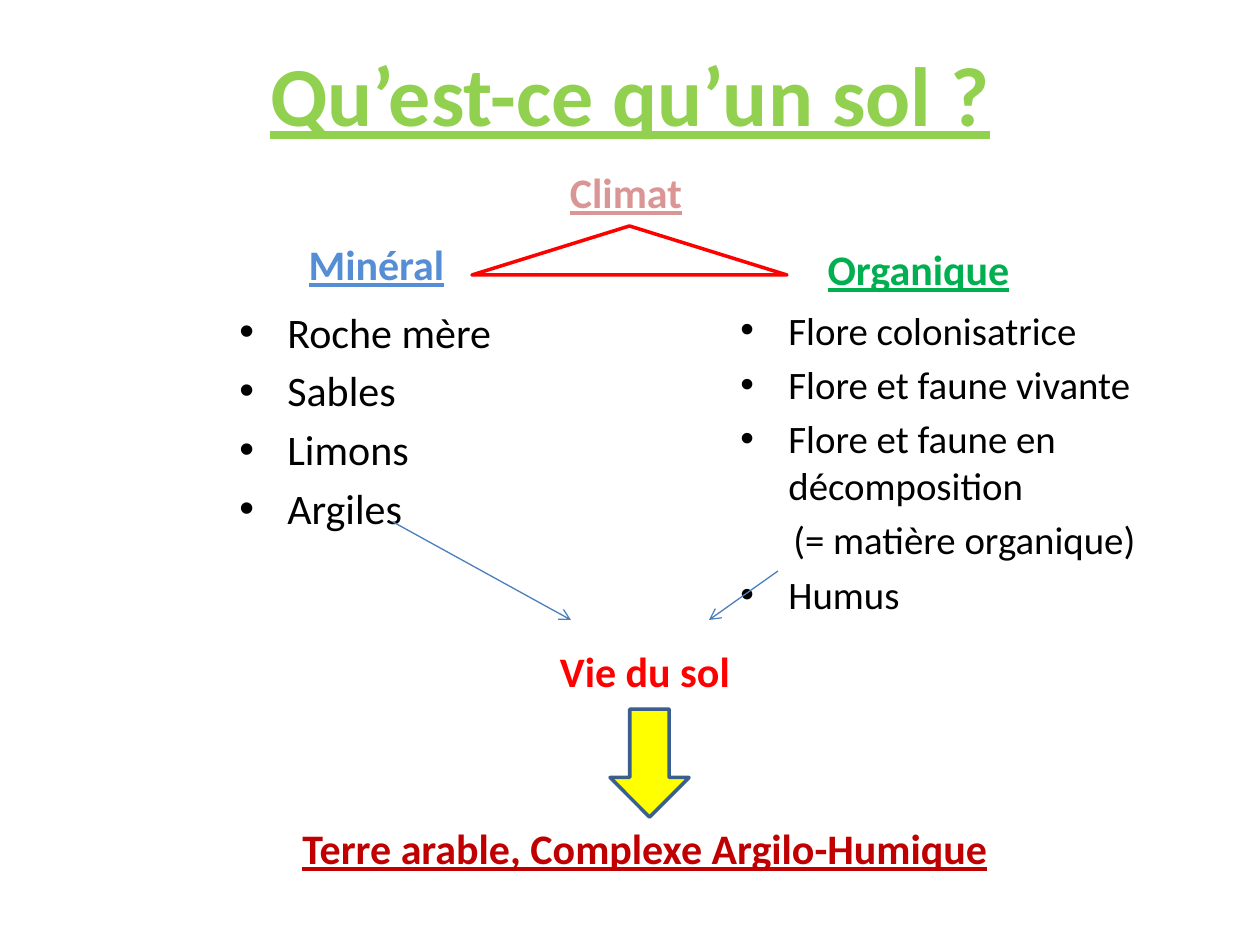
from lxml.etree import SubElement
from pptx import Presentation
from pptx.dml.color import RGBColor
from pptx.enum.shapes import MSO_CONNECTOR, MSO_SHAPE
from pptx.enum.text import MSO_ANCHOR, PP_ALIGN
from pptx.oxml.ns import qn
from pptx.util import Pt

PX = 914400 / 126


def px(n):
    return round(n * PX)


def rgb(value):
    return RGBColor.from_string(value)


class Deck:
    font = "Calibri"
    indent = 48

    def __init__(self, prs):
        self.s = prs.slides.add_slide(prs.slide_layouts[6])

    def box(self, x, y, w, h, anchor):
        tf = self.s.shapes.add_textbox(*map(px, (x, y, w, h))).text_frame
        tf.word_wrap = True
        tf.vertical_anchor = anchor
        return tf

    def run(self, p, text, color, **fmt):
        r = p.add_run()
        r.text = text
        r.font.color.rgb = rgb(color)
        for name, value in {"name": self.font, **fmt}.items():
            setattr(r.font, name, value)

    def heading(self, text, x, y, w, h, color, size=24, underline=True,
                anchor=MSO_ANCHOR.MIDDLE):
        p = self.box(x, y, w, h, anchor).paragraphs[0]
        p.alignment = PP_ALIGN.CENTER
        self.run(p, text, color, size=Pt(size), bold=True, underline=underline)

    def bullets(self, items, x, y, w, h, size):
        """Each item is (text, left margin); the plain indent gets a bullet."""
        tf = self.box(x, y, w, h, MSO_ANCHOR.TOP)
        for i, (text, margin) in enumerate(items):
            p = tf.paragraphs[0] if i == 0 else tf.add_paragraph()
            p.space_before = Pt(size * 0.2)
            pPr = p._p.get_or_add_pPr()
            pPr.set("marL", str(px(margin)))
            if margin == self.indent:
                pPr.set("indent", str(-px(margin)))
                SubElement(pPr, qn("a:buFont"), typeface="Arial")
                SubElement(pPr, qn("a:buChar"), char="•")
            self.run(p, text, "000000", size=Pt(size))

    def shape(self, kind, x, y, w, h, line, fill=None):
        sp = self.s.shapes.add_shape(kind, *map(px, (x, y, w, h)))
        sp.shadow.inherit = False
        if fill:
            sp.fill.solid()
            sp.fill.fore_color.rgb = rgb(fill)
        else:
            sp.fill.background()
        sp.line.color.rgb = rgb(line)
        sp.line.width = Pt(2)

    def arrow(self, x1, y1, x2, y2, color):
        c = self.s.shapes.add_connector(MSO_CONNECTOR.STRAIGHT, *map(px, (x1, y1, x2, y2)))
        c.line.color.rgb = rgb(color)
        c.line.width = Pt(0.75)
        SubElement(c.line._get_or_add_ln(), qn("a:tailEnd"), type="arrow")
        SubElement(c._element.spPr, qn("a:effectLst"))


def main():
    prs = Presentation()
    prs.slide_width, prs.slide_height = px(1260), px(945)
    d = Deck(prs)

    # Two columns: mineral and organic
    d.heading("Minéral", 98, 207, 557, 88, "558ED5", anchor=MSO_ANCHOR.BOTTOM)
    d.bullets([(t, d.indent) for t in ("Roche mère", "Sables", "Limons", "Argiles")],
              227, 300, 393, 242, 24)
    d.heading("Organique", 640, 212, 557, 88, "00B050", anchor=MSO_ANCHOR.BOTTOM)
    d.bullets([("Flore colonisatrice", d.indent),
               ("Flore et faune vivante", d.indent),
               ("Flore et faune en décomposition", d.indent),
               ("(= matière organique)", 53),
               ("Humus", d.indent)],
              728, 300, 469, 281, 22.2)

    # Title and centred headings
    d.heading("Qu’est-ce qu’un sol ?", 63, 38, 1134, 110, "92D050", size=48)
    d.heading("Climat", 59, 137, 1134, 110, "D99694")
    d.heading("Terre arable, Complexe Argilo-Humique", 78, 793, 1134, 110, "C00000")
    d.heading("Vie du sol", 78, 616, 1134, 110, "FF0000", underline=False)

    # Arrows towards soil life, then down to arable land
    d.arrow(393, 522, 571, 620, "4B7EBC")
    d.arrow(778, 571, 709, 620, "4B7EBC")
    d.shape(MSO_SHAPE.DOWN_ARROW, 610, 709, 79, 108, "3A5F8C", fill="FFFF00")

    # Triangle under the climate heading
    d.shape(MSO_SHAPE.ISOSCELES_TRIANGLE, 472, 226, 315, 49, "FF0000")

    prs.save("out.pptx")


if __name__ == "__main__":
    main()
